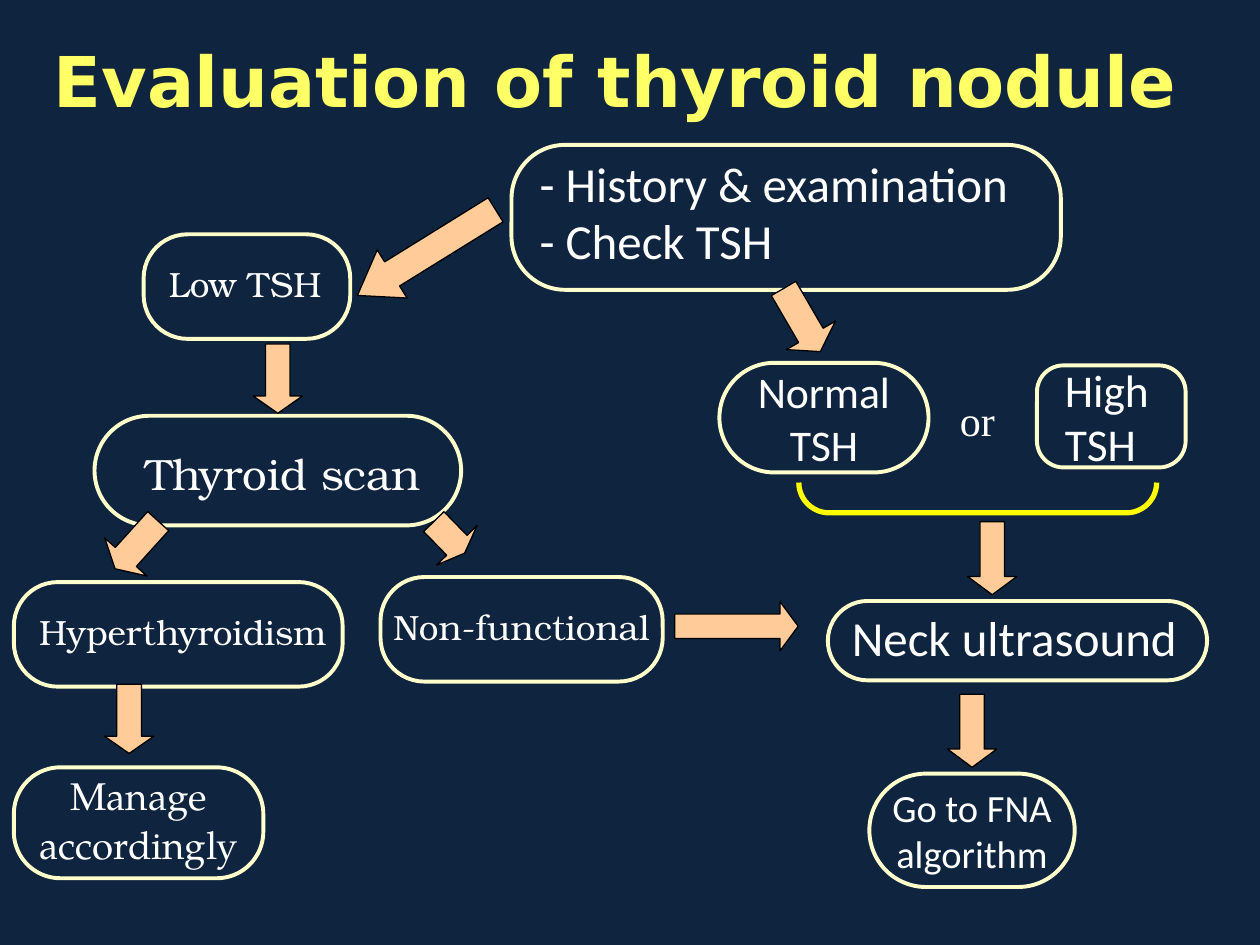
"""Build the flowchart slide for evaluating a thyroid nodule."""
from pptx import Presentation
from pptx.dml.color import RGBColor
from pptx.enum.shapes import MSO_SHAPE as Preset
from pptx.enum.text import MSO_ANCHOR as Anchor, PP_ALIGN as Align
from pptx.util import Inches, Pt


def paint(color_format, hex_color):
    color_format.rgb = RGBColor.from_string(hex_color)


def write(frame, lines, font_name, size, align=Align.LEFT, spacing=1.0, gap=0.0,
          color="FFFFFF", bold=False, **frame_format):
    for attribute, value in frame_format.items():
        setattr(frame, attribute, value)
    font_format = {"name": font_name, "size": Pt(size), "bold": bold}
    for index, line in enumerate(lines):
        paragraph = frame.paragraphs[0] if index == 0 else frame.add_paragraph()
        paragraph_format = {"alignment": align, "line_spacing": spacing,
                            "space_before": Pt(gap * size if index else 0)}
        for attribute, value in paragraph_format.items():
            setattr(paragraph, attribute, value)
        run = paragraph.add_run()
        run.text = line
        for attribute, value in font_format.items():
            setattr(run.font, attribute, value)
        paint(run.font.color, color)


prs = Presentation()
prs.slide_width, prs.slide_height = Inches(10), Inches(7.5)
slide = prs.slides.add_slide(prs.slide_layouts[6])
slide.background.fill.solid()
paint(slide.background.fill.fore_color, "0F243E")

BONUM, PAGELLA, CALIBRI = "TeX Gyre Bonum", "TeX Gyre Pagella", "Calibri"
loose = {"spacing": 0.9, "gap": 0.2}
centered = {"align": Align.CENTER}
steps = [
    ((1.14, 1.86, 1.64, 0.83), 0.42, ["Low TSH"], BONUM, 20, loose),
    ((4.06, 1.15, 4.36, 1.15), 0.37, ["- History & examination", "- Check TSH"],
     CALIBRI, 28, {"spacing": 0.8, "gap": 0.2}),
    ((6.57, 4.77, 3.01, 0.63), 0.5, ["Neck ultrasound"], CALIBRI, 28, loose),
    ((5.71, 2.88, 1.66, 0.87), 0.5, ["Normal", "TSH"], CALIBRI, 25, centered),
    ((0.75, 3.3, 2.91, 0.87), 0.5, ["Thyroid scan"], BONUM, 25,
     {**centered, "spacing": 1.1, "margin_left": Inches(0.18)}),
    ((8.23, 2.9, 1.18, 0.81), 0.26, ["High", "TSH"], CALIBRI, 26,
     {"margin_left": Inches(0.16)}),
    ((6.9, 6.14, 1.63, 0.9), 0.5, ["Go to FNA", "algorithm"], CALIBRI, 22, centered),
    ((0.11, 4.62, 2.61, 0.83), 0.42, ["Hyperthyroidism"], BONUM, 20, loose),
    ((3.02, 4.58, 2.24, 0.83), 0.42, ["Non-functional"], BONUM, 20, {**loose, **centered}),
    ((0.11, 6.09, 1.98, 0.88), 0.42, ["Manage", "accordingly"], PAGELLA, 22,
     {**loose, **centered}),
]
for bounds, rounding, lines, font_name, size, text_format in steps:
    step = slide.shapes.add_shape(Preset.ROUNDED_RECTANGLE, *map(Inches, bounds))
    step.adjustments[0] = rounding
    step.shadow.inherit = False
    step.fill.background()
    step.line.width = Pt(2.25)
    paint(step.line.color, "FFFFCC")
    write(step.text_frame, lines, font_name, size, word_wrap=False,
          vertical_anchor=Anchor.MIDDLE, **text_format)

arrows = [
    ((3.16, 1.36, 0.45, 1.29), 58.2, 0.72),
    ((6.14, 2.25, 0.45, 0.58), 329.8, 0.33),
    ((2.01, 2.73, 0.39, 0.55), 0, 0.35),
    ((0.86, 4.07, 0.45, 0.51), 42.1, 0.28),
    ((3.34, 4.09, 0.45, 0.35), 315.7, 0.25),
    ((0.83, 5.43, 0.39, 0.55), 0, 0.35),
    ((5.65, 4.48, 0.39, 0.98), 270, 0.37),
    ((7.68, 4.14, 0.39, 0.58), 0, 0.37),
    ((7.52, 5.51, 0.39, 0.58), 0, 0.37),
]
for bounds, rotation, head_length in arrows:
    arrow = slide.shapes.add_shape(Preset.DOWN_ARROW, *map(Inches, bounds))
    arrow.rotation = rotation
    arrow.adjustments[0] = 0.5
    arrow.adjustments[1] = head_length
    arrow.shadow.inherit = False
    arrow.fill.solid()
    paint(arrow.fill.fore_color, "FFCC99")
    arrow.line.width = Pt(0)
    paint(arrow.line.color, "000000")

tsh_bracket = slide.shapes.add_shape(
    Preset.LEFT_BRACKET, Inches(7.64), Inches(2.53), Inches(0.24), Inches(2.84))
tsh_bracket.rotation = 270
tsh_bracket.adjustments[0] = 1.0
tsh_bracket.shadow.inherit = False
tsh_bracket.fill.background()
tsh_bracket.line.width = Pt(3)
paint(tsh_bracket.line.color, "FFFF00")

captions = [
    ((7.52, 3.08, 0.63, 0.5), "or", "Times New Roman", 24, {}),
    ((0.33, 0.25, 9.33, 0.77), "Evaluation of thyroid nodule", "DejaVu Sans", 40,
     {"color": "FFFF66", "bold": True}),
]
for bounds, text, font_name, size, text_format in captions:
    caption = slide.shapes.add_textbox(*map(Inches, bounds))
    write(caption.text_frame, [text], font_name, size, word_wrap=True, **text_format)

prs.save("out.pptx")
